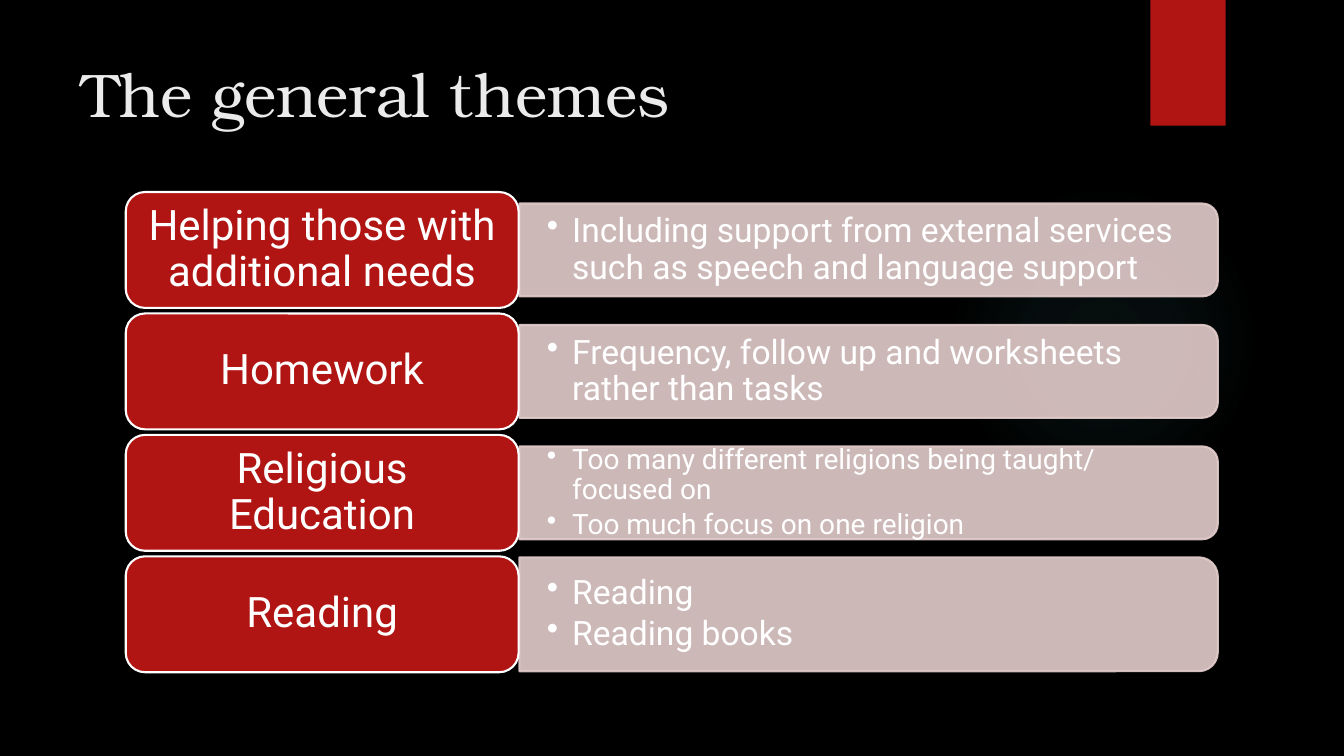
from lxml import etree
from pptx import Presentation
from pptx import util as u
from pptx.dml.color import RGBColor
from pptx.enum import shapes, text
from pptx.oxml import parse_xml
from pptx.oxml.ns import nsdecls, qn

BLACK = RGBColor(0x00, 0x00, 0x00)
WHITE = RGBColor(0xFF, 0xFF, 0xFF)
OFF_WHITE = RGBColor(0xEB, 0xEB, 0xEB)
RED = RGBColor(0xB0, 0x15, 0x13)
PINK = RGBColor(0xE4, 0xCC, 0xCC)
TEAL = RGBColor(0x50, 0xB9, 0xC1)

# Theme, bullet points, bullet size, band height in cm
THEMES = [
    ("Helping those with additional needs",
     ["Including support from external services such as speech and language support"], 24, 2.34),
    ("Homework", ["Frequency, follow up and worksheets rather than tasks"], 24, 2.34),
    ("Religious Education",
     ["Too many different religions being taught/ focused on",
      "Too much focus on one religion"], 20, 2.34),
    ("Reading", ["Reading", "Reading books"], 24, 2.87),
]
FIRST_TOP, ROW_PITCH = 4.84, 3.06
LABEL_LEFT, LABEL_WIDTH, LABEL_HEIGHT = 3.17, 9.9, 2.92
BAND_LEFT, BAND_LENGTH = 13.09, 17.6


def add_shape(page, kind, left, top, width, height, color, line=None):
    shape = page.shapes.add_shape(kind, u.Cm(left), u.Cm(top), u.Cm(width), u.Cm(height))
    shape.shadow.inherit = False
    shape.fill.solid()
    shape.fill.fore_color.rgb = color
    if line is None:
        shape.line.fill.background()
    else:
        shape.line.color.rgb = line
        shape.line.width = u.Pt(1.5)
    return shape


def set_frame(shape, side, edge, anchor=text.MSO_ANCHOR.MIDDLE):
    frame = shape.text_frame
    frame.word_wrap = True
    frame.vertical_anchor = anchor
    frame.margin_left = frame.margin_right = u.Cm(side)
    frame.margin_top = frame.margin_bottom = u.Cm(edge)
    return frame


def style(para, size, color=WHITE, name="Roboto"):
    para.font.size = u.Pt(size)
    para.font.name = name
    para.font.color.rgb = color


def add_glow(page):
    glow = add_shape(page, shapes.MSO_SHAPE.OVAL, 23.9, 4.65, 7.82, 7.82, TEAL)
    stops = "".join(
        f'<a:gs pos="{place * 1000}"><a:srgbClr val="{TEAL}">'
        f'<a:alpha val="{alpha * 1000}"/></a:srgbClr></a:gs>'
        for place, alpha in [(0, 7), (36, 6), (69, 0)])
    gradient = parse_xml(
        f'<a:gradFill {nsdecls("a")}><a:gsLst>{stops}</a:gsLst><a:path path="circle">'
        '<a:fillToRect l="50000" t="50000" r="50000" b="50000"/></a:path></a:gradFill>')
    solid = glow.element.spPr.find(qn("a:solidFill"))
    glow.element.spPr.replace(solid, gradient)


def add_title(page, words):
    box = page.shapes.add_textbox(u.Cm(1.8), u.Cm(1.27), u.Cm(26.14), u.Cm(3.89))
    para = set_frame(box, 0.25, 0.13, text.MSO_ANCHOR.TOP).paragraphs[0]
    para.text = words
    style(para, 44, OFF_WHITE, "TeX Gyre Bonum")


def add_band(page, middle, height):
    # The shape stands upright and is turned a quarter to the right
    left = BAND_LEFT + (BAND_LENGTH - height) / 2
    band = add_shape(page, shapes.MSO_SHAPE.ROUND_2_SAME_RECTANGLE, left,
                     middle - BAND_LENGTH / 2, height, BAND_LENGTH, PINK, PINK)
    band.rotation = 90
    for color in band.element.spPr.iter(qn("a:srgbClr")):
        etree.SubElement(color, qn("a:alpha"), val="90000")


def add_bullets(page, middle, height, points, size):
    box = page.shapes.add_textbox(u.Cm(BAND_LEFT), u.Cm(middle - height / 2),
                                  u.Cm(17.5), u.Cm(height))
    frame = set_frame(box, 0.69, 0.36)
    for index, point in enumerate(points):
        para = frame.add_paragraph() if index else frame.paragraphs[0]
        para.text = point
        properties = para._p.get_or_add_pPr()
        properties.set("marL", str(u.Cm(0.64)))
        properties.set("indent", str(-u.Cm(0.64)))
        etree.SubElement(properties, qn("a:buChar"), char="•")
        para.line_spacing = 0.9
        para.space_after = u.Pt(size * 0.15)
        style(para, size)


def add_label(page, top, words):
    label = add_shape(page, shapes.MSO_SHAPE.ROUNDED_RECTANGLE, LABEL_LEFT, top,
                      LABEL_WIDTH, LABEL_HEIGHT, RED, WHITE)
    para = set_frame(label, 0.36, 0.15).paragraphs[0]
    para.text = words
    para.alignment = text.PP_ALIGN.CENTER
    para.line_spacing = 0.9
    style(para, 30)


def main():
    deck = Presentation()
    deck.slide_width, deck.slide_height = u.Cm(33.87), u.Cm(19.05)
    page = deck.slides.add_slide(deck.slide_layouts[6])
    page.background.fill.solid()
    page.background.fill.fore_color.rgb = BLACK

    # Backdrop and title
    add_glow(page)
    add_shape(page, shapes.MSO_SHAPE.RECTANGLE, 28.99, 0, 1.9, 3.17, RED)
    add_title(page, "The general themes")

    # One row for each theme
    for row, (theme, points, size, height) in enumerate(THEMES):
        top = FIRST_TOP + row * ROW_PITCH
        middle = top + LABEL_HEIGHT / 2
        add_band(page, middle, height)
        add_bullets(page, middle, height, points, size)
        add_label(page, top, theme)

    deck.save("out.pptx")


if __name__ == "__main__":
    main()
